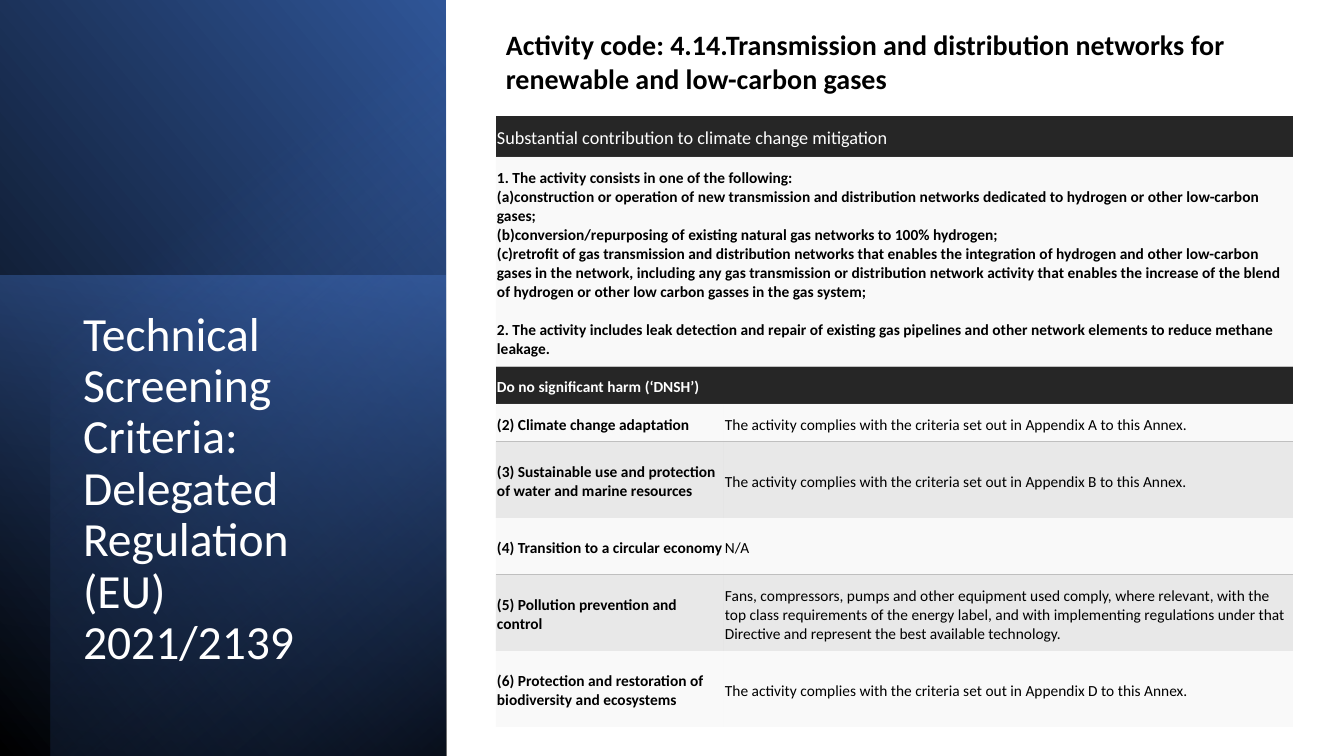
import math

import pptx
import pptx.dml.color
import pptx.enum.shapes
import pptx.enum.text
import pptx.oxml
import pptx.oxml.ns
import pptx.util

RGB = pptx.dml.color.RGBColor
BLACK = RGB(0x00, 0x00, 0x00)
WHITE = RGB(0xFF, 0xFF, 0xFF)
BLUE = RGB(0x2F, 0x55, 0x97)
MID = RGB(0x44, 0x72, 0xC4)
NAVY = RGB(0x20, 0x38, 0x64)
PALE = RGB(0x8F, 0xAA, 0xDC)
DARK = RGB(0x26, 0x26, 0x26)
LIGHT = RGB(0xF2, 0xF2, 0xF2)
GREY = RGB(0xBF, 0xBF, 0xBF)

FONT = "Calibri"
SCALE = 914400 / 100.8  # EMU per px
COLS = [228, 569]
NS = pptx.oxml.ns.nsdecls("a")
qn = pptx.oxml.ns.qn

TITLE = "Technical Screening Criteria: Delegated Regulation (EU) 2021/2139"
HEADING = ("Activity code: 4.14.Transmission and distribution networks for "
           "renewable and low-carbon gases")
TESTS = [
    "1. The activity consists in one of the following:",
    "(a)construction or operation of new transmission and distribution networks "
    "dedicated to hydrogen or other low-carbon gases;",
    "(b)conversion/repurposing of existing natural gas networks to 100% hydrogen;",
    "(c)retrofit of gas transmission and distribution networks that enables the "
    "integration of hydrogen and other low-carbon gases in the network, including "
    "any gas transmission or distribution network activity that enables the "
    "increase of the blend of hydrogen or other low carbon gasses in the gas system;",
    "2. The activity includes leak detection and repair of existing gas pipelines "
    "and other network elements to reduce methane leakage.",
]
ANNEX = "The activity complies with the criteria set out in Appendix {} to this Annex."

# Each row: height, fill, alpha, rule below, then the lines of each cell
ROWS = [
    (41, DARK, 100, False, [["Substantial contribution to climate change mitigation"]]),
    (209, LIGHT, 45, True, [TESTS]),
    (38, DARK, 100, False, [["Do no significant harm (‘DNSH’)"]]),
    (38, LIGHT, 45, True, [["(2) Climate change adaptation"], [ANNEX.format("A")]]),
    (76, GREY, 35, False, [["(3) Sustainable use and protection of water and marine "
                            "resources"], [ANNEX.format("B")]]),
    (57, LIGHT, 45, True, [["(4) Transition to a circular economy"], ["N/A"]]),
    (76, GREY, 35, False, [["(5) Pollution prevention and control"],
                           ["Fans, compressors, pumps and other equipment used comply, "
                            "where relevant, with the top class requirements of the "
                            "energy label, and with implementing regulations under that "
                            "Directive and represent the best available technology."]]),
    (76, LIGHT, 45, False, [["(6) Protection and restoration of biodiversity and "
                             "ecosystems"], [ANNEX.format("D")]]),
]


def px(num):
    return pptx.util.Emu(round(num * SCALE))


def fade(color, pct):
    """Set the opacity of a colour element."""
    color.append(pptx.oxml.parse_xml(f'<a:alpha {NS} val="{pct * 1000}"/>'))


def style(para, size, color, bold=False):
    font = para.font
    font.name, font.size, font.bold = FONT, pptx.util.Pt(size), bold
    font.color.rgb = color


def blend(shape, stops, angle):
    """Fill with a two-stop gradient; the angle runs clockwise."""
    shape.shadow.inherit = False
    shape.line.fill.background()
    shape.fill.gradient()
    shape.fill.gradient_angle = (360 - angle) % 360
    for stop, (pos, color, _) in zip(shape.fill.gradient_stops, stops):
        stop.position = pos / 100
        stop.color.rgb = color
    for node, (_, _, pct) in zip(shape.element.iter(qn("a:srgbClr")), stops):
        fade(node, pct)


def panel(slide, box, turn, flip, stops, angle):
    """Add a quarter-turned rectangle that covers box on the slide."""
    x, y, wide, high = box
    shape = slide.shapes.add_shape(
        pptx.enum.shapes.MSO_SHAPE.RECTANGLE,
        px(x + (wide - high) / 2), px(y + (high - wide) / 2), px(high), px(wide))
    shape.rotation = turn
    if flip:
        shape.element.spPr.find(qn("a:xfrm")).set("flipH", "1")
    blend(shape, stops, angle)


def disc(slide, x, y, radius, turns, tilt, stops, angle):
    """Add a cut disc whose arc runs through the given angles."""
    def dot(deg, pull=0):
        rad = math.radians(deg)
        return (x + radius * (math.cos(rad) - pull * math.sin(rad)),
                y + radius * (math.sin(rad) + pull * math.cos(rad)))

    dots = [dot(deg) for deg in turns]
    outline = slide.shapes.build_freeform(*dots[0], scale=SCALE)
    outline.add_line_segments(dots[1:], close=True)
    shape = outline.convert_to_shape()

    # Bend each side of the outline into an arc
    left, top = shape.left, shape.top
    sides = list(shape.element.iter(qn("a:lnTo")))
    for side, start, end in zip(sides, turns, turns[1:]):
        pull = 4 / 3 * math.tan(math.radians(end - start) / 4)
        marks = [dot(start, pull), dot(end, -pull), dot(end)]
        points = "".join(f'<a:pt x="{px(h) - left}" y="{px(v) - top}"/>'
                         for h, v in marks)
        side.getparent().replace(side, pptx.oxml.parse_xml(
            f"<a:cubicBezTo {NS}>{points}</a:cubicBezTo>"))
    shape.rotation = tilt
    blend(shape, stops, angle)


def place(shape, box, text, size, color, bold=False):
    shape.left, shape.top, shape.width, shape.height = map(px, box)
    frame = shape.text_frame
    frame.word_wrap = True
    frame.vertical_anchor = pptx.enum.text.MSO_ANCHOR.TOP
    frame.text = text
    para = frame.paragraphs[0]
    para.alignment = pptx.enum.text.PP_ALIGN.LEFT
    style(para, size, color, bold)
    return frame


def rule(cell, above, below):
    """Draw the grey rules of a cell and clear its other edges."""
    shown = {"lnT": above, "lnB": below}
    props = cell._tc.get_or_add_tcPr()
    for spot, side in enumerate(("lnL", "lnR", "lnT", "lnB")):
        paint = "<a:noFill/>"
        if shown.get(side):
            paint = f'<a:solidFill><a:srgbClr val="{GREY}"/></a:solidFill>'
        props.insert(spot, pptx.oxml.parse_xml(
            f'<a:{side} {NS} w="9525">{paint}</a:{side}>'))


def write(cell, lines, size, color, bold):
    cell.margin_left = cell.margin_right = px(1)
    cell.margin_top, cell.margin_bottom = px(9), px(5)
    cell.vertical_anchor = pptx.enum.text.MSO_ANCHOR.MIDDLE
    cell.text = "\n".join(lines)
    for para in cell.text_frame.paragraphs:
        style(para, size, color, bold)
    if len(lines) > 1:
        para.space_before = pptx.util.Pt(13.5)  # gap ahead of point 2


def grid(slide, x, y):
    high = sum(row[0] for row in ROWS)
    table = slide.shapes.add_table(
        len(ROWS), len(COLS), px(x), px(y), px(sum(COLS)), px(high)).table
    table.first_row = table.horz_banding = False
    for col, wide in zip(table.columns, COLS):
        col.width = px(wide)
    above = False
    for num, (tall, fill, pct, below, texts) in enumerate(ROWS):
        table.rows[num].height = px(tall)
        cells = [table.cell(num, col) for col in range(len(COLS))]
        if len(texts) == 1:
            cells[0].merge(cells[1])
        for cell in cells:
            cell.fill.solid()
            cell.fill.fore_color.rgb = fill
            for node in cell._tc.tcPr.iter(qn("a:srgbClr")):
                fade(node, pct)
            rule(cell, above, below)
        for col, lines in enumerate(texts):
            write(cells[col], lines, 11 if num else 13,
                  WHITE if fill == DARK else BLACK, num > 0 and col == 0)
        above = below


def main():
    deck = pptx.Presentation()
    deck.slide_width, deck.slide_height = px(1344), px(756)
    slide = deck.slides.add_slide(deck.slide_layouts[5])

    # Blue side panel
    panel(slide, (0, 0, 446, 756), 90, True,
          [(0, BLACK, 100), (100, BLUE, 100)], 310)
    panel(slide, (0, 275, 446, 481), 270, False,
          [(0, MID, 50), (100, NAVY, 0)], 190)
    panel(slide, (51, 0, 395, 756), 270, True,
          [(0, BLACK, 59), (69, MID, 0)], 220)
    disc(slide, 182, 397, 265, [-224.5, -180, -90, 0, 21.3], 101.6,
         [(39, PALE, 0), (100, BLUE, 26)], 310)

    # Title, in front of the panel
    title = slide.shapes.title
    frame = place(title, (73, 305, 317, 339), TITLE, 34, WHITE)
    frame.auto_size = pptx.enum.text.MSO_AUTO_SIZE.NONE
    frame.paragraphs[0].line_spacing = 0.9
    slide.shapes.element.append(title.element)

    # Criteria table and its heading
    grid(slide, 496, 116)
    box = slide.shapes.add_textbox(0, 0, 0, 0)
    frame = place(box, (496, 23, 798, 78), HEADING, 20, BLACK, True)
    frame.auto_size = pptx.enum.text.MSO_AUTO_SIZE.SHAPE_TO_FIT_TEXT

    deck.save("out.pptx")


if __name__ == "__main__":
    main()
